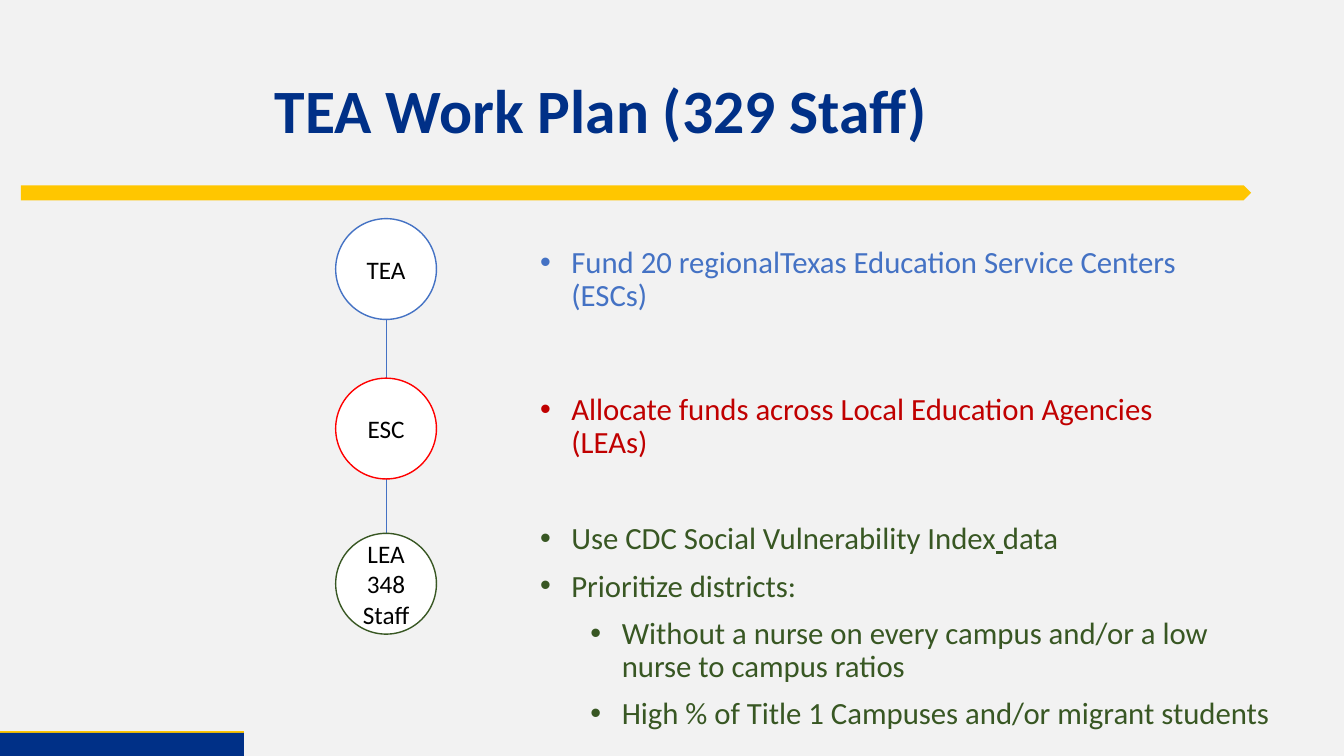
from lxml.etree import SubElement
from pptx import Presentation
from pptx.dml.color import RGBColor
from pptx.enum.shapes import MSO_CONNECTOR, MSO_SHAPE
from pptx.enum.text import MSO_ANCHOR, PP_ALIGN
from pptx.oxml.ns import qn
from pptx.util import Cm, Pt

NAVY, GOLD, BLUE, GREEN = "003087", "FFC600", "4472C4", "385723"


def color(code):
    """Turn a hex string into a colour."""
    return RGBColor.from_string(code)


def write(para, text, size=22, ink="000000", bold=False, under=None):
    """Add one formatted run to a paragraph."""
    run = para.add_run()
    run.text = text
    font = run.font
    font.name, font.size, font.bold = "Calibri", Pt(size), bold
    font.underline = under
    font.color.rgb = color(ink)


def shape(slide, kind, box, fill, edge=None):
    """Add a filled shape, outlined if an edge colour is given."""
    item = slide.shapes.add_shape(kind, *map(Cm, box))
    item.shadow.inherit = False
    item.fill.solid()
    item.fill.fore_color.rgb = color(fill)
    if edge:
        item.line.color.rgb = color(edge)
        item.line.width = Pt(1)
    else:
        item.line.fill.background()
    return item


def line(slide, start, end, ink, width):
    """Draw a straight line between two points."""
    item = slide.shapes.add_connector(
        MSO_CONNECTOR.STRAIGHT, *map(Cm, start + end))
    item.line.color.rgb = color(ink)
    item.line.width = Pt(width)
    SubElement(item._element.spPr, qn("a:effectLst"))


def frame(slide, box):
    """Add a wrapping text box and return its text frame."""
    area = slide.shapes.add_textbox(*map(Cm, box)).text_frame
    area.word_wrap = True
    return area


def header(slide, left, top, width, height):
    """Place the title and the gold bar at its foot."""
    bar = (0.53, top + height - 0.03, 31, 0.38)
    shape(slide, MSO_SHAPE.PENTAGON, bar, GOLD)
    area = frame(slide, (left, top, width, height))
    area.vertical_anchor = MSO_ANCHOR.MIDDLE
    para = area.paragraphs[0]
    para.line_spacing = 0.9
    write(para, "TEA Work Plan (329 Staff)", 44, NAVY, True)


def footer(slide, left, top, width, height):
    """Place the navy block with its gold upper edge."""
    line(slide, (left, top), (left + width, top), GOLD, 3)
    shape(slide, MSO_SHAPE.RECTANGLE, (left, top, width, height), NAVY)


def chain(slide, left, top, size, nodes):
    """Stack circles on a thin line, each at its offset."""
    mid = left + size / 2
    line(slide, (mid, top + size), (mid, top + nodes[-1][0] + size / 2),
         BLUE, 0.5)
    for drop, edge, words in nodes:
        node = shape(slide, MSO_SHAPE.OVAL, (left, top + drop, size, size),
                     "FFFFFF", edge)
        area = node.text_frame
        area.word_wrap = True
        area.vertical_anchor = MSO_ANCHOR.MIDDLE
        for i, text in enumerate(words):
            para = area.add_paragraph() if i else area.paragraphs[0]
            para.alignment = PP_ALIGN.CENTER
            write(para, text, 18)


def points(slide, box, ink, items):
    """Fill a box with bullets given as a level and a list of runs."""
    area = frame(slide, box)
    for i, (level, runs) in enumerate(items):
        para = area.add_paragraph() if i else area.paragraphs[0]
        para.level = level
        para.line_spacing = 0.9
        para.space_before = Pt(10 if i else 0)
        props = para._p.get_or_add_pPr()
        props.set("marL", str(Cm(0.79 + 1.27 * level)))
        props.set("indent", str(-Cm(0.79)))
        SubElement(props, qn("a:buFont"), typeface="Arial")
        SubElement(props, qn("a:buChar"), char="•")
        for text, under in runs:
            write(para, text, ink=ink, under=under)


def main():
    """Build and save the slide."""
    deck = Presentation()
    deck.slide_width, deck.slide_height = Cm(33.87), Cm(19.05)
    slide = deck.slides.add_slide(deck.slide_layouts[6])
    back = slide.background.fill
    back.solid()
    back.fore_color.rgb = color("F2F2F2")
    header(slide, 6.68, 1.02, 24.87, 3.68)
    footer(slide, 0, 18.47, 6.15, 0.58)
    chain(slide, 8.46, 5.51, 2.54, [
        (0, BLUE, ["TEA"]),
        (4.02, "FF0000", ["ESC"]),
        (7.93, GREEN, ["LEA", "348 Staff"])])
    left = 13.36
    points(slide, (left, 6.1, 17.78, 1.96), BLUE, [
        (0, [("Fund 20 regionalTexas Education Service Centers (ESCs)",
              None)])])
    points(slide, (left, 9.8, 17.78, 1.96), "C00000", [
        (0, [("Allocate funds across Local Education Agencies (LEAs)",
              None)])])
    points(slide, (left, 13.06, 19.1, 5.56), GREEN, [
        (0, [("Use CDC Social Vulnerability Index", None), (" ", True),
             ("data", None)]),
        (0, [("Prioritize districts:", None)]),
        (1, [("Without a nurse on every campus and/or "
              "a low nurse to campus ratios", None)]),
        (1, [("High % of Title 1 Campuses and/or migrant students", None)])])
    deck.save("out.pptx")


if __name__ == "__main__":
    main()
